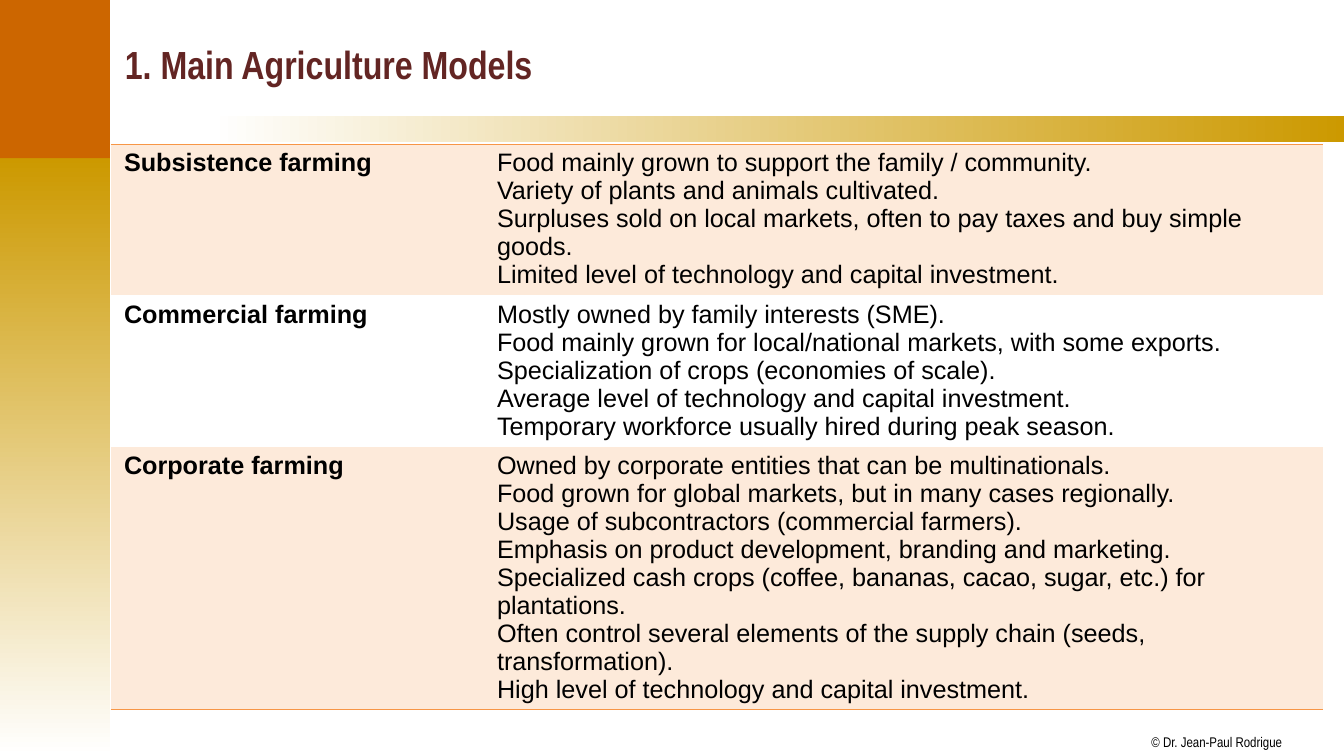
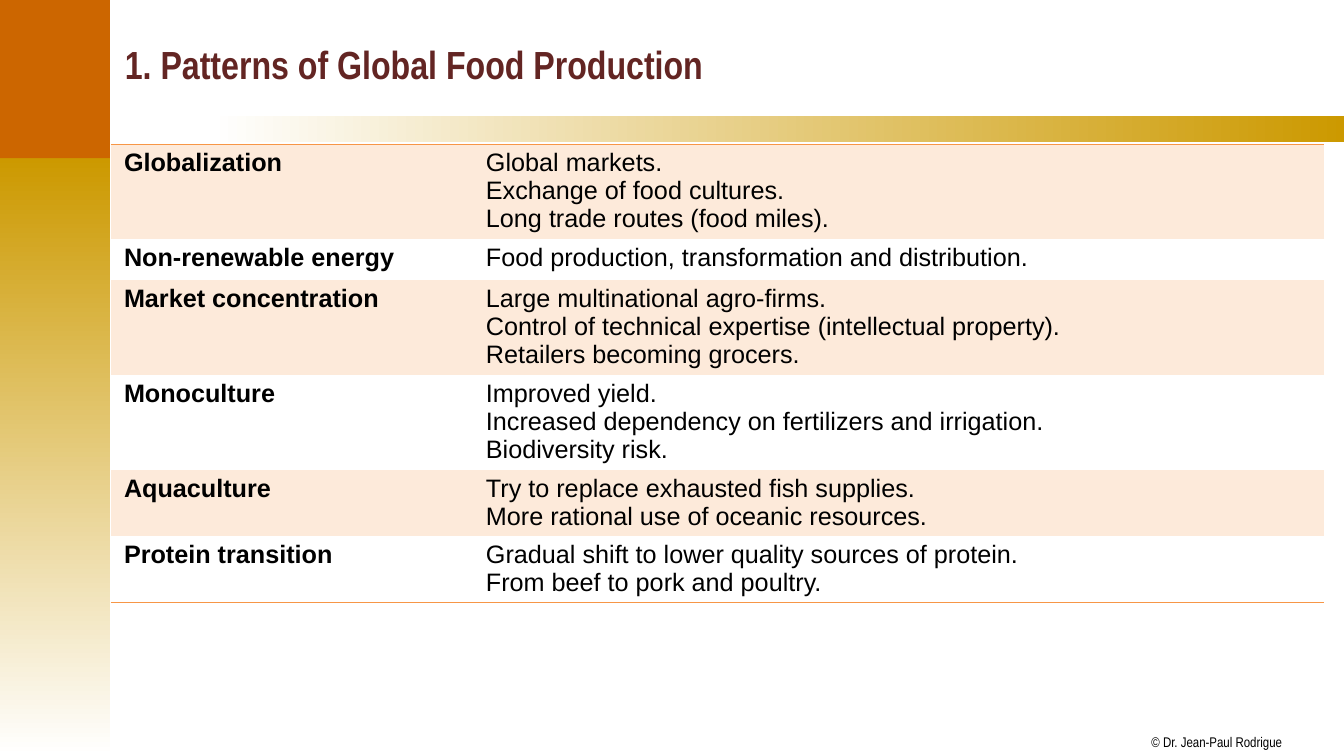
from dataclasses import dataclass

from lxml import etree
from pptx import Presentation
from pptx.dml.color import RGBColor
from pptx.enum.shapes import MSO_SHAPE
from pptx.enum.text import MSO_ANCHOR, MSO_AUTO_SIZE
from pptx.oxml.ns import qn
from pptx.util import Inches, Pt

RECTANGLE = MSO_SHAPE.RECTANGLE
MIDDLE = MSO_ANCHOR.MIDDLE
FIT_SHAPE = MSO_AUTO_SIZE.SHAPE_TO_FIT_TEXT
PLAIN_TABLE_STYLE = "{2D5ABB26-0587-4C30-8999-92F81FD0307C}"


@dataclass(frozen=True)
class Theme:
    gold: str = "CC9900"
    orange: str = "CC6600"
    white: str = "FFFFFF"
    black: str = "000000"
    title: str = "632523"
    rule: str = "F79646"
    shaded_row: str = "FDEADA"
    heading_font: str = "Arial Narrow"
    body_font: str = "Arial"
    title_size: int = 28
    body_size: int = 18
    body_line: int = 20
    footer_size: int = 10


THEME = Theme()

# left, top, width, height, colours, gradient angle (counter-clockwise)
BANDS = [
    (-0.02, 1.57, 1.11, 5.93, (THEME.gold, THEME.white), 270),
    (2.09, 1.15, 11.25, 0.26, (THEME.white, THEME.gold), 0),
    (-0.02, -0.01, 1.11, 1.58, (THEME.orange,), None),
]

# title, column widths, rows of (heading, height, points)
SLIDES = [
    ("1. Main Agriculture Models", (3.7, 8.32), [
        ("Subsistence farming", 1.5, [
            "Food mainly grown to support the family / community.",
            "Variety of plants and animals cultivated.",
            "Surpluses sold on local markets, often to pay taxes and buy simple goods.",
            "Limited level of technology and capital investment.",
        ]),
        ("Commercial farming", 1.5, [
            "Mostly owned by family interests (SME).",
            "Food mainly grown for local/national markets, with some exports.",
            "Specialization of crops (economies of scale).",
            "Average level of technology and capital investment.",
            "Temporary workforce usually hired during peak season.",
        ]),
        ("Corporate farming", 2.61, [
            "Owned by corporate entities that can be multinationals.",
            "Food grown for global markets, but in many cases regionally.",
            "Usage of subcontractors (commercial farmers).",
            "Emphasis on product development, branding and marketing.",
            "Specialized cash crops (coffee, bananas, cacao, sugar, etc.) for plantations.",
            "Often control several elements of the supply chain (seeds, transformation).",
            "High level of technology and capital investment.",
        ]),
    ]),
    ("1. Patterns of Global Food Production", (3.59, 8.44), [
        ("Globalization", 0.94, [
            "Global markets.",
            "Exchange of food cultures.",
            "Long trade routes (food miles).",
        ]),
        ("Non-renewable energy", 0.41, [
            "Food production, transformation and distribution.",
        ]),
        ("Market concentration", 0.94, [
            "Large multinational agro-firms.",
            "Control of technical expertise (intellectual property).",
            "Retailers becoming grocers.",
        ]),
        ("Monoculture", 0.94, [
            "Improved yield.",
            "Increased dependency on fertilizers and irrigation.",
            "Biodiversity risk.",
        ]),
        ("Aquaculture", 0.66, [
            "Try to replace exhausted fish supplies.",
            "More rational use of oceanic resources.",
        ]),
        ("Protein transition", 0.66, [
            "Gradual shift to lower quality sources of protein.",
            "From beef to pork and poultry.",
        ]),
    ]),
]


def write_text(text_frame, lines, font=THEME.body_font, size=THEME.body_size,
               color=THEME.black, bold=False, line_spacing=None):
    """Fill the frame with one paragraph per line."""
    for index, line in enumerate(lines):
        paragraph = text_frame.add_paragraph() if index else text_frame.paragraphs[0]
        paragraph.line_spacing = line_spacing
        run = paragraph.add_run()
        run.text = line
        run.font.name = font
        run.font.size = Pt(size)
        run.font.bold = bold
        run.font.color.rgb = RGBColor.from_string(color)


def add_cell_rule(cell, edge):
    """Draw a 1 pt rule on a cell edge, lnT or lnB."""
    line = etree.Element(qn(f"a:{edge}"), w=str(Pt(1)))
    fill = etree.SubElement(line, qn("a:solidFill"))
    etree.SubElement(fill, qn("a:srgbClr"), val=THEME.rule)
    etree.SubElement(line, qn("a:prstDash"), val="solid")
    cell._tc.get_or_add_tcPr().insert(0, line)


presentation = Presentation()
presentation.slide_width = Inches(13.33)
presentation.slide_height = Inches(7.5)
blank_layout = presentation.slide_layouts[6]

for title, column_widths, rows in SLIDES:
    slide = presentation.slides.add_slide(blank_layout)

    for left, top, width, height, colors, angle in BANDS:
        band = slide.shapes.add_shape(
            RECTANGLE, Inches(left), Inches(top), Inches(width), Inches(height))
        band.shadow.inherit = False
        band.line.fill.background()
        if angle is None:
            band.fill.solid()
            band.fill.fore_color.rgb = RGBColor.from_string(colors[0])
        else:
            band.fill.gradient()
            band.fill.gradient_angle = angle
            for stop, color in zip(band.fill.gradient_stops, colors):
                stop.color.rgb = RGBColor.from_string(color)

    footer = slide.shapes.add_textbox(
        Inches(11.42), Inches(7.28), Inches(1.31), Inches(0.17)).text_frame
    footer.margin_left = footer.margin_right = 0
    footer.margin_top = footer.margin_bottom = 0
    footer.word_wrap = False
    footer.auto_size = FIT_SHAPE
    write_text(footer, ["© Dr. Jean-Paul Rodrigue"],
               font=THEME.heading_font, size=THEME.footer_size)

    title_frame = slide.shapes.add_textbox(
        Inches(1.14), Inches(0.11), Inches(11.97), Inches(1.04)).text_frame
    title_frame.word_wrap = True
    title_frame.vertical_anchor = MIDDLE
    write_text(title_frame, [title], font=THEME.heading_font,
               size=THEME.title_size, color=THEME.title, bold=True)

    table_height = sum(height for _, height, _ in rows)
    table = slide.shapes.add_table(
        len(rows), 2, Inches(1.1), Inches(1.43),
        Inches(sum(column_widths)), Inches(table_height)).table
    table.first_row = table.horz_banding = False
    table._tbl.tblPr.find(qn("a:tableStyleId")).text = PLAIN_TABLE_STYLE
    for column, width in zip(table.columns, column_widths):
        column.width = Inches(width)

    for row_index, (heading, height, points) in enumerate(rows):
        table.rows[row_index].height = Inches(height)
        row_color = THEME.white if row_index % 2 else THEME.shaded_row
        for column_index, lines in enumerate(([heading], points)):
            cell = table.cell(row_index, column_index)
            cell.margin_left = cell.margin_right = Inches(0.13)
            cell.margin_top = cell.margin_bottom = Inches(0.05)
            write_text(cell.text_frame, lines, bold=column_index == 0,
                       line_spacing=Pt(THEME.body_line))
            cell.fill.solid()
            cell.fill.fore_color.rgb = RGBColor.from_string(row_color)
            if row_index == 0:
                add_cell_rule(cell, "lnT")
            if row_index == len(rows) - 1:
                add_cell_rule(cell, "lnB")

presentation.save("out.pptx")
